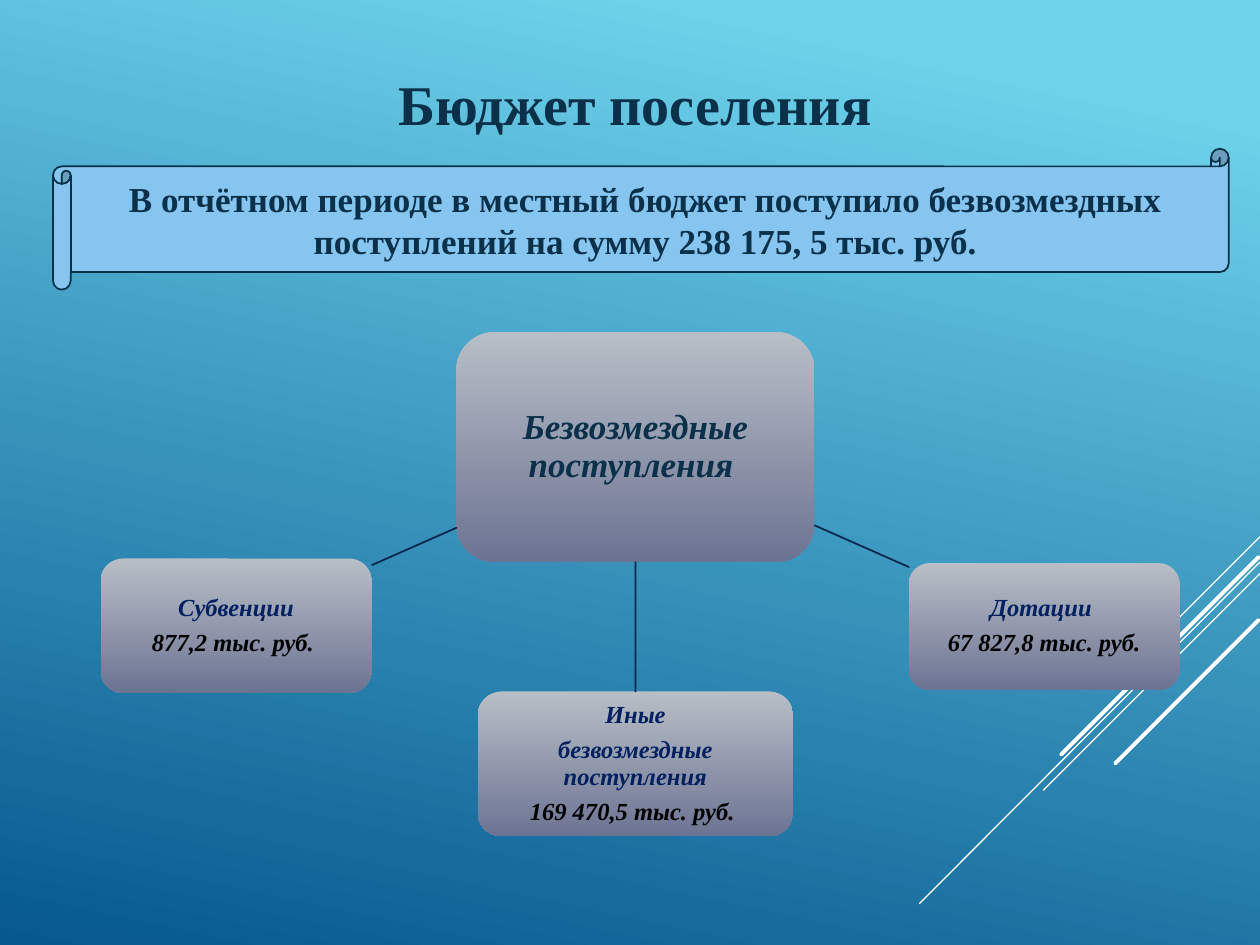
"""Builds the slide on gratuitous receipts of the settlement budget."""
from dataclasses import dataclass

import pptx
import pptx.dml.color
import pptx.enum.shapes
import pptx.enum.text
import pptx.oxml
import pptx.oxml.ns
import pptx.util

Cm = pptx.util.Cm
Pt = pptx.util.Pt
SHAPES = pptx.enum.shapes.MSO_SHAPE
ANCHOR = pptx.enum.text.MSO_ANCHOR

FONT = "Times New Roman"
INK = "0A304A"
NAVY = "002060"
BLACK = "000000"
WHITE = "FFFFFF"
BRANCH = "04264E"


@dataclass
class Line:
    start: tuple[float, float]
    end: tuple[float, float]
    weight: float
    colour: str


@dataclass
class Box:
    left: float
    top: float
    width: float
    height: float
    paragraphs: list[tuple[str, str]]
    size: float = 14
    inset: float = 0.1


def rgb(colour: str) -> pptx.dml.color.RGBColor:
    return pptx.dml.color.RGBColor.from_string(colour)


def fill_gradient(fill, stops: list[tuple[float, str]], clockwise: float) -> None:
    fill.gradient()
    fill.gradient_angle = 360 - clockwise
    for stop, (position, colour) in zip(fill.gradient_stops, stops):
        stop.position = position
        stop.color.rgb = rgb(colour)


def write_paragraph(paragraph, text: str, size: float, colour: str, italic: bool = False) -> None:
    paragraph.alignment = pptx.enum.text.PP_ALIGN.CENTER
    run = paragraph.add_run()
    run.text = text
    font = run.font
    font.name, font.size, font.bold, font.italic = FONT, Pt(size), True, italic
    font.color.rgb = rgb(colour)


def draw_line(slide, line: Line):
    connector = slide.shapes.add_connector(
        pptx.enum.shapes.MSO_CONNECTOR.STRAIGHT,
        *(Cm(value) for value in (*line.start, *line.end)),
    )
    connector.line.color.rgb = rgb(line.colour)
    connector.line.width = Pt(line.weight)
    properties = connector.element.spPr
    properties.find(pptx.oxml.ns.qn("a:ln")).set("cap", "rnd")
    properties.append(pptx.oxml.parse_xml(f"<a:effectLst {pptx.oxml.ns.nsdecls('a')}/>"))
    return connector


def draw_box(slide, box: Box):
    shape = slide.shapes.add_shape(
        SHAPES.ROUNDED_RECTANGLE, Cm(box.left), Cm(box.top), Cm(box.width), Cm(box.height)
    )
    shape.shadow.inherit = False
    shape.line.fill.background()
    fill_gradient(shape.fill, [(0, "B8BEC6"), (1, "6C7493")], 90)
    frame = shape.text_frame
    frame.word_wrap = True
    frame.vertical_anchor = ANCHOR.MIDDLE
    frame.margin_left = frame.margin_right = Cm(box.inset)
    frame.margin_top = frame.margin_bottom = Cm(box.inset)
    for index, (text, colour) in enumerate(box.paragraphs):
        paragraph = frame.add_paragraph() if index else frame.paragraphs[0]
        paragraph.line_spacing = 0.9
        paragraph.space_after = Pt(0.35 * box.size)
        write_paragraph(paragraph, text, box.size, colour, italic=True)
    return shape


def draw_title(slide, text: str) -> None:
    title = slide.shapes.title
    title.left, title.top, title.width, title.height = Cm(1.07), Cm(1.27), Cm(23.47), Cm(1.63)
    frame = title.text_frame
    frame.auto_size = pptx.enum.text.MSO_AUTO_SIZE.NONE
    frame.vertical_anchor = ANCHOR.TOP
    write_paragraph(frame.paragraphs[0], text, 32, INK)


def draw_scroll(slide, text: str) -> None:
    scroll = slide.shapes.add_shape(
        SHAPES.HORIZONTAL_SCROLL, Cm(1.07), Cm(3), Cm(23.7), Cm(2.84)
    )
    scroll.shadow.inherit = False
    scroll.fill.solid()
    scroll.fill.fore_color.rgb = rgb("86C5EF")
    scroll.line.color.rgb = rgb("043148")
    scroll.line.width = Pt(1)
    frame = scroll.text_frame
    frame.word_wrap = True
    frame.vertical_anchor = ANCHOR.MIDDLE
    write_paragraph(frame.paragraphs[0], text, 20, INK)


RAYS = [
    Line((25.4, 10.82), (23.29, 12.93), 0.75, WHITE),
    Line((25.4, 11.33), (18.54, 18.21), 0.75, WHITE),
    Line((25.4, 11.56), (21.03, 15.93), 0.75, WHITE),
    Line((25.37, 11.23), (21.39, 15.21), 2.25, WHITE),
    Line((25.37, 12.5), (22.48, 15.39), 2.25, WHITE),
]
RECEIPTS = Box(9.2, 6.69, 7.22, 4.64, [("Безвозмездные поступления ", INK)], 20, 0.15)
GRANTS = Box(18.32, 11.35, 5.46, 2.56, [("Дотации ", NAVY), ("67 827,8 тыс. руб.", BLACK)])
OTHER = Box(9.63, 13.94, 6.36, 2.92, [
    ("Иные", NAVY),
    ("безвозмездные поступления", NAVY),
    ("169 470,5 тыс. руб. ", BLACK),
])
SUBVENTIONS = Box(2.03, 11.26, 5.46, 2.71, [("Субвенции", NAVY), ("877,2 тыс. руб. ", BLACK)])
SIDE_BRANCHES = [
    Line((16.42, 10.59), (18.32, 11.43), 1, BRANCH),
    Line((9.2, 10.64), (7.5, 11.39), 1, BRANCH),
]
MIDDLE_BRANCH = Line((12.81, 11.33), (12.81, 13.94), 1, BRANCH)


def main() -> None:
    presentation = pptx.Presentation()
    presentation.slide_width, presentation.slide_height = Cm(25.4), Cm(19.05)
    slide = presentation.slides.add_slide(presentation.slide_layouts[5])
    fill_gradient(slide.background.fill, [(0.1, "6ED2EB"), (1, "06588E")], 102)

    for ray in RAYS:
        draw_line(slide, ray)
    draw_title(slide, "Бюджет поселения")
    draw_scroll(
        slide,
        "В отчётном периоде в местный бюджет поступило безвозмездных "
        "поступлений на сумму 238 175, 5 тыс. руб.",
    )

    receipts = draw_box(slide, RECEIPTS)
    for branch in SIDE_BRANCHES:
        draw_line(slide, branch)
    draw_box(slide, GRANTS)
    other = draw_box(slide, OTHER)
    draw_box(slide, SUBVENTIONS)
    middle_branch = draw_line(slide, MIDDLE_BRANCH)
    middle_branch.begin_connect(receipts, 2)
    middle_branch.end_connect(other, 0)

    presentation.save("out.pptx")


if __name__ == "__main__":
    main()
